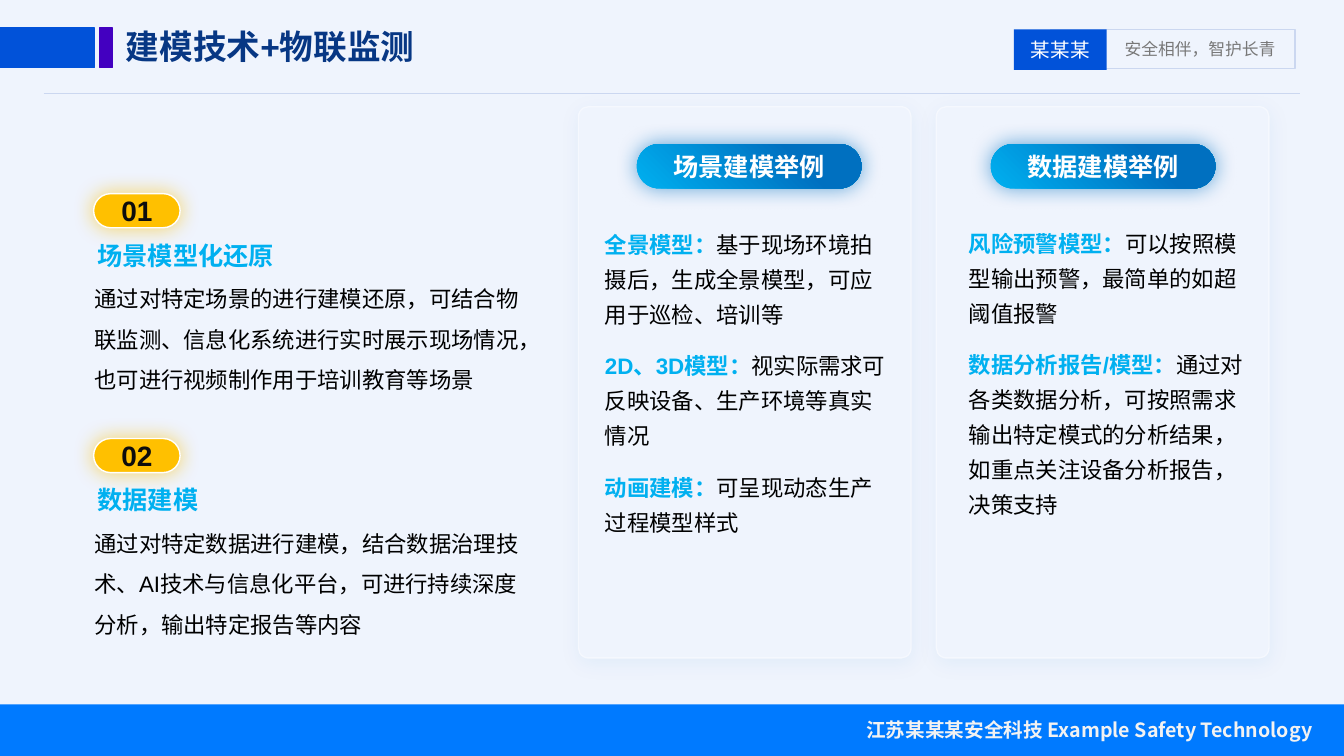
from dataclasses import dataclass
from typing import Optional

from lxml.etree import SubElement
from pptx import Presentation
from pptx.dml.color import RGBColor
from pptx.enum.lang import MSO_LANGUAGE_ID
from pptx.enum.shapes import MSO_CONNECTOR, MSO_SHAPE
from pptx.enum.text import MSO_ANCHOR, MSO_AUTO_SIZE, PP_ALIGN
from pptx.oxml.ns import qn
from pptx.util import Cm, Pt

COLORS = {
    "background": "EFF4FD", "rule": "CBD7F0", "footer": "007AFF", "footer_text": "F2F2F2",
    "tagline": "787878", "brand": "0152D9", "accent": "4300C0", "title": "073784",
    "card_edge": "F5F8FE", "sky": "00B0F0", "deep": "0070C0", "badge": "FFC000",
    "badge_text": "0D0D0D", "white": "FFFFFF", "black": "000000",
}
CJK_FONT = "Noto Sans CJK SC"


@dataclass(frozen=True)
class Area:
    """A rectangle in centimetres."""
    left: float
    top: float
    width: float
    height: float


@dataclass(frozen=True)
class Glow:
    """A soft shadow: opacity in percent, blur and distance in points."""
    color: str
    opacity: int
    blur: float
    distance: float = 0


@dataclass(frozen=True)
class Topic:
    """A numbered topic in the left column."""
    number: str
    heading: str
    detail: str


@dataclass(frozen=True)
class Card:
    """An example card with its pill heading and list."""
    left: float
    pill_left: float
    heading: str
    list_area: Area
    items: tuple[tuple[str, str], ...]


TOPICS = (
    Topic("01", "场景模型化还原",
          "通过对特定场景的进行建模还原，可结合物联监测、信息化系统进行实时展示现场情况，也可进行视频制作用于培训教育等场景"),
    Topic("02", "数据建模",
          "通过对特定数据进行建模，结合数据治理技术、AI技术与信息化平台，可进行持续深度分析，输出特定报告等内容"),
)
CARDS = (
    Card(14.58, 16.05, "场景建模举例", Area(14.99, 5.49, 7.82, 8.13), (
        ("全景模型：", "基于现场环境拍摄后，生成全景模型，可应用于巡检、培训等"),
        ("2D、3D模型：", "视实际需求可反映设备、生产环境等真实情况"),
        ("动画建模：", "可呈现动态生产过程模型样式"))),
    Card(23.6, 24.97, "数据建模举例", Area(24.16, 5.46, 7.62, 7.72), (
        ("风险预警模型：", "可以按照模型输出预警，最简单的如超阈值报警"),
        ("数据分析报告/模型：",
         "通过对各类数据分析，可按照需求输出特定模式的分析结果，如重点关注设备分析报告，决策支持"))),
)
TOPIC_STEP = 6.17


def rgb(name: str) -> RGBColor:
    """Look up a named colour."""
    return RGBColor.from_string(COLORS[name])


def bounds(area: Area) -> tuple:
    """Convert an area to slide lengths."""
    return Cm(area.left), Cm(area.top), Cm(area.width), Cm(area.height)


def write(para, text: str, *, size: float, color: str, bold: bool = False,
          font: str = "Arial", align=PP_ALIGN.LEFT, spacing: float = 1.0) -> None:
    """Append formatted text to a paragraph."""
    para.alignment = align
    para.line_spacing = spacing
    span = para.add_run()
    span.text = text
    span.font.size = Pt(size)
    span.font.bold = bold
    span.font.name = font
    span.font.color.rgb = rgb(color)
    span.font.language_id = MSO_LANGUAGE_ID.SIMPLIFIED_CHINESE
    SubElement(span._r.get_or_add_rPr(), qn("a:ea"), typeface=CJK_FONT)


def prepare(box, anchor=MSO_ANCHOR.TOP, wrap: bool = True):
    """Set up the text frame and return its first paragraph."""
    frame = box.text_frame
    frame.word_wrap = wrap
    frame.auto_size = MSO_AUTO_SIZE.NONE
    frame.vertical_anchor = anchor
    return frame.paragraphs[0]


def add_label(page, area: Area, text: str, *, wrap: bool = True, **style) -> None:
    """Add a text box with one paragraph."""
    write(prepare(page.shapes.add_textbox(*bounds(area)), wrap=wrap), text, **style)


def add_block(page, area: Area, *, fill: Optional[str] = None, line: Optional[str] = None,
              corner: Optional[float] = None, glow: Optional[Glow] = None):
    """Add a plain or rounded rectangle."""
    kind = MSO_SHAPE.RECTANGLE if corner is None else MSO_SHAPE.ROUNDED_RECTANGLE
    block = page.shapes.add_shape(kind, *bounds(area))
    if corner is not None:
        block.adjustments[0] = corner
    if fill:
        block.fill.solid()
        block.fill.fore_color.rgb = rgb(fill)
    else:
        block.fill.background()
    if line:
        block.line.color.rgb = rgb(line)
        block.line.width = Pt(1)
    else:
        block.line.fill.background()
    block.shadow.inherit = False
    if glow:
        effects = block._element.spPr.find(qn("a:effectLst"))
        shade = SubElement(effects, qn("a:outerShdw"), blurRad=str(Pt(glow.blur)),
                           dist=str(Pt(glow.distance)), dir="5400000", algn="ctr", rotWithShape="0")
        tint = SubElement(shade, qn("a:srgbClr"), val=COLORS[glow.color])
        SubElement(tint, qn("a:alpha"), val=str(glow.opacity * 1000))
    return block


def add_caption(block, text: str, **style) -> None:
    """Centre text inside a block."""
    write(prepare(block, MSO_ANCHOR.MIDDLE), text, align=PP_ALIGN.CENTER, **style)


def place(page, holder, area: Area):
    """Move a placeholder to the front and return its first paragraph."""
    holder.left, holder.top, holder.width, holder.height = bounds(area)
    page.shapes._spTree.append(holder._element)
    return prepare(holder)


def draw_frame(page) -> None:
    """Draw the header rule, the brand tag and the footer."""
    rule = page.shapes.add_connector(MSO_CONNECTOR.STRAIGHT, Cm(1.1), Cm(2.34), Cm(32.77), Cm(2.34))
    rule.line.color.rgb = rgb("rule")
    rule.line.width = Pt(0.5)
    SubElement(rule._element.spPr, qn("a:effectLst"))
    add_block(page, Area(0, 17.75, 33.87, 1.3), fill="footer")
    add_label(page, Area(20.02, 17.96, 13.31, 0.86), "江苏某某某安全科技 Example Safety Technology",
              size=14, color="footer_text", bold=True, font=CJK_FONT, align=PP_ALIGN.RIGHT)
    add_label(page, Area(28.09, 0.84, 4.32, 0.76), "安全相伴，智护长青", wrap=False,
              size=12, color="tagline", font=CJK_FONT)
    add_block(page, Area(26.49, 0.74, 6.15, 0.99), line="rule")
    tag = add_block(page, Area(25.55, 0.74, 2.34, 1.02), fill="brand")
    add_caption(tag, "某某某", size=14, color="white", font=CJK_FONT)
    add_block(page, Area(0, 0.71, 2.39, 0.99), fill="brand", line="brand")
    add_block(page, Area(2.51, 0.71, 0.33, 0.99), fill="accent", line="accent")


def draw_topic(page, topic: Topic, shift: float) -> None:
    """Draw a numbered topic, moved down by the shift."""
    badge = add_block(page, Area(2.36, 4.88 + shift, 2.18, 0.86), fill="badge", line="white",
                      corner=0.5, glow=Glow("badge", 60, 15))
    add_caption(badge, topic.number, size=20, color="badge_text", bold=True)
    add_label(page, Area(2.21, 5.92 + shift, 5.99, 1.02), topic.heading,
              size=18, color="sky", bold=True)
    add_label(page, Area(2.13, 6.73 + shift, 11.35, 3.2), topic.detail,
              size=16, color="black", spacing=1.5)


def draw_card(page, card: Card, holder) -> None:
    """Draw a card and fill its list placeholder."""
    add_block(page, Area(card.left, 2.69, 8.38, 13.89), fill="background", line="card_edge",
              corner=0.03, glow=Glow("deep", 6, 14, 3))
    pill = add_block(page, Area(card.pill_left, 3.63, 5.66, 1.12), corner=0.5,
                     glow=Glow("deep", 60, 15))
    pill.fill.gradient()
    pill.fill.gradient_angle = 45
    for stop, color, position in zip(pill.fill.gradient_stops, ("sky", "deep"), (0, 0.72)):
        stop.color.rgb = rgb(color)
        stop.position = position
    add_caption(pill, card.heading, size=18, color="white", bold=True)
    para = place(page, holder, card.list_area)
    for index, (lead, detail) in enumerate(card.items):
        if index:
            para = holder.text_frame.add_paragraph()
        props = para._p.get_or_add_pPr()
        props.set("marL", "0")
        props.set("indent", "0")
        SubElement(props, qn("a:buNone"))
        para.space_before = Pt(6 if index else 0)
        para.space_after = Pt(6)
        write(para, lead, size=16, color="sky", bold=True, spacing=1.3)
        write(para, detail, size=16, color="black", spacing=1.3)


def main() -> None:
    """Build the slide and save it."""
    deck = Presentation()
    deck.slide_width, deck.slide_height = Cm(33.87), Cm(19.05)
    page = deck.slides.add_slide(deck.slide_layouts[3])
    page.background.fill.solid()
    page.background.fill.fore_color.rgb = rgb("background")
    title, *lists = list(page.placeholders)
    draw_frame(page)
    for index, topic in enumerate(TOPICS):
        draw_topic(page, topic, index * TOPIC_STEP)
    for card, holder in zip(CARDS, lists):
        draw_card(page, card, holder)
    write(place(page, title, Area(2.92, 0.53, 8.38, 1.27)), "建模技术+物联监测",
          size=24, color="title", bold=True)
    deck.save("out.pptx")


if __name__ == "__main__":
    main()
